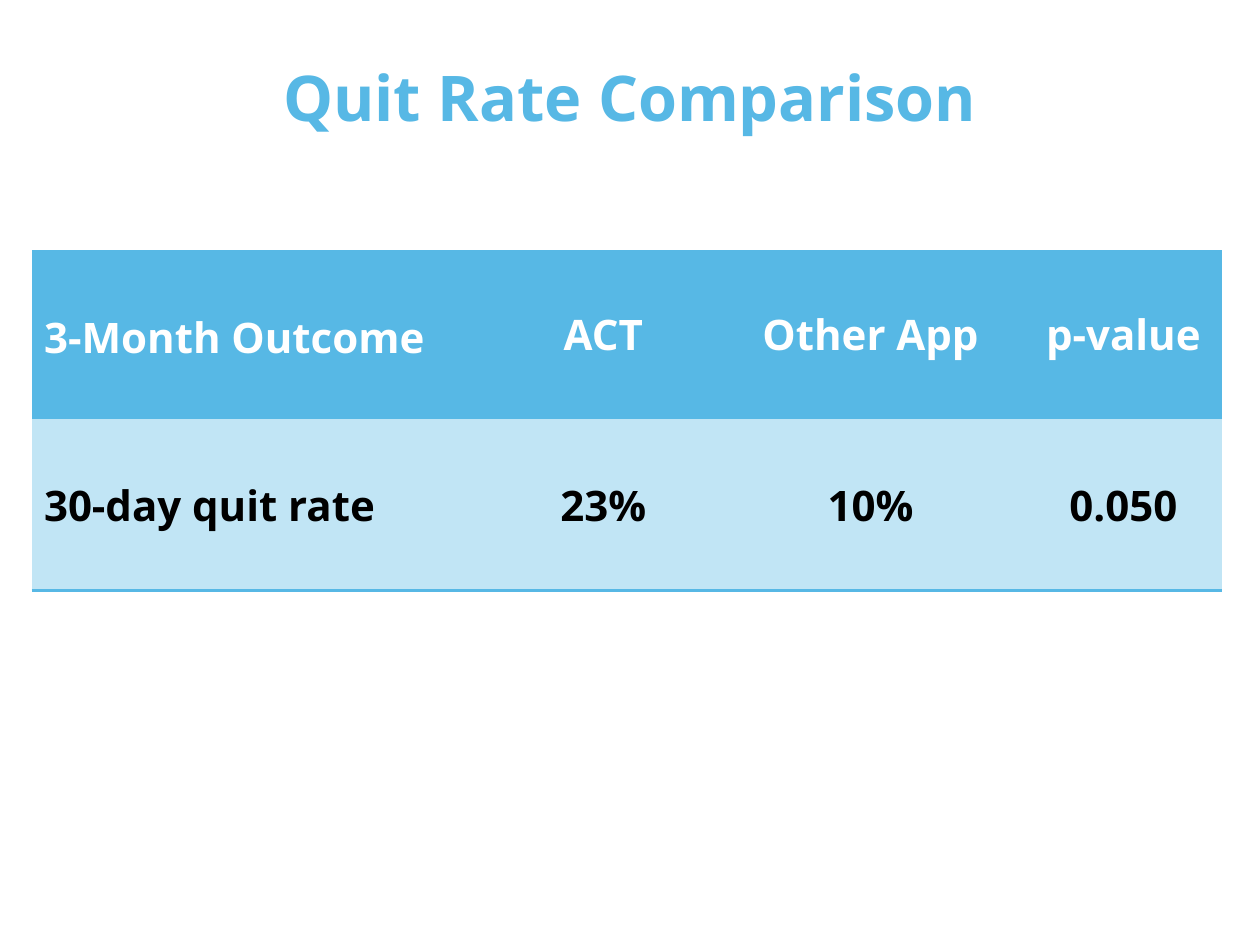
from lxml import etree
from pptx import Presentation
from pptx.dml.color import RGBColor
from pptx.enum import text
from pptx.oxml import ns
from pptx.util import Pt

SKY = RGBColor(0x57, 0xB8, 0xE5)
PALE = RGBColor(0xC1, 0xE5, 0xF5)
WHITE = RGBColor(0xFF, 0xFF, 0xFF)
BLACK = RGBColor(0, 0, 0)
PLAIN_STYLE = "{2D5ABB26-0587-4C30-8999-92F81FD0307C}"


def add_run(paragraph, wording, size, color):
    run = paragraph.add_run()
    run.text = wording
    run.font.name = "Open Sans"
    run.font.size = Pt(size)
    run.font.bold = True
    run.font.color.rgb = color


def add_bottom_border(cell, color, width):
    line = etree.Element(ns.qn("a:lnB"), w=str(Pt(width)))
    fill = etree.SubElement(line, ns.qn("a:solidFill"))
    etree.SubElement(fill, ns.qn("a:srgbClr"), val=str(color))
    cell._tc.get_or_add_tcPr().insert(0, line)


prs = Presentation()
prs.slide_width, prs.slide_height = Pt(720), Pt(540)
slide = prs.slides.add_slide(prs.slide_layouts[5])

# Title
title = slide.shapes.title
title.left, title.top, title.width, title.height = Pt(0), Pt(30), Pt(720), Pt(50.5)
heading = title.text_frame
heading.vertical_anchor = text.MSO_ANCHOR.BOTTOM
heading.paragraphs[0].alignment = text.PP_ALIGN.CENTER
add_run(heading.paragraphs[0], "Quit Rate Comparison", 36, SKY)

# Quit rate table
outcomes = [
    ["3-Month Outcome", "ACT", "Other App", "p-value"],
    ["30-day quit rate", "23%", "10%", "0.050"],
]
column_widths = [262, 129.5, 176, 113]
row_heights = [96.5, 98]
row_colors = [(SKY, WHITE), (PALE, BLACK)]

table = slide.shapes.add_table(
    len(outcomes), len(column_widths), Pt(18), Pt(143),
    Pt(sum(column_widths)), Pt(sum(row_heights))).table
table._tbl.tblPr.find(ns.qn("a:tableStyleId")).text = PLAIN_STYLE
table.horz_banding = False
for column, width in zip(table.columns, column_widths):
    column.width = Pt(width)

for r, (values, height, (fill, ink)) in enumerate(zip(outcomes, row_heights, row_colors)):
    table.rows[r].height = Pt(height)
    for c, value in enumerate(values):
        cell = table.cell(r, c)
        cell.fill.solid()
        cell.fill.fore_color.rgb = fill
        cell.vertical_anchor = text.MSO_ANCHOR.MIDDLE
        paragraph = cell.text_frame.paragraphs[0]
        paragraph.alignment = text.PP_ALIGN.CENTER if c else text.PP_ALIGN.LEFT
        add_run(paragraph, value, 24, ink)

# Looser first heading and the closing rule
first_heading = table.cell(0, 0).text_frame.paragraphs[0]
first_heading.line_spacing = 1.1
first_heading.space_after = Pt(28)
for cell in table.rows[1].cells:
    add_bottom_border(cell, SKY, 2)

prs.save("out.pptx")
